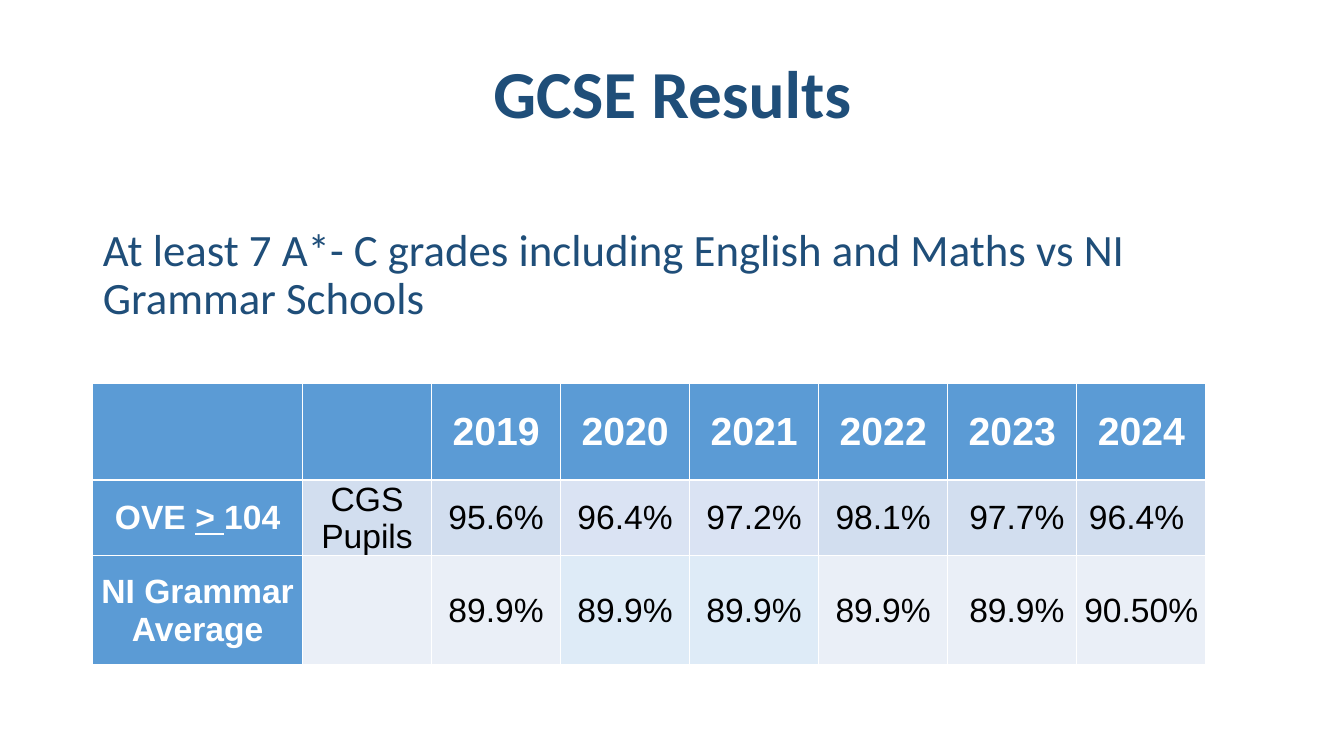
"""Build the GCSE results slide with its comparison table."""
from dataclasses import dataclass

from lxml.etree import SubElement
from pptx import Presentation
from pptx.dml.color import RGBColor
from pptx.enum.text import MSO_ANCHOR, PP_ALIGN
from pptx.oxml import parse_xml
from pptx.oxml.ns import nsdecls, qn
from pptx.util import Inches, Pt


@dataclass(frozen=True)
class Theme:
    navy: str = "1F4E79"
    blue: str = "5B9BD5"
    white: str = "FFFFFF"
    black: str = "000000"
    upper: str = "D2DEEF"
    upper_accent: str = "DAE3F3"
    lower: str = "EAEFF7"
    lower_accent: str = "DEEBF7"
    heading_font: str = "Calibri"
    table_font: str = "Arial"
    title_size: int = 48
    body_size: int = 32
    header_size: int = 28
    cell_size: int = 24


def style(para, name, size, color, bold, align):
    para.font.name = name
    para.font.size = Pt(size)
    para.font.color.rgb = RGBColor.from_string(color)
    para.font.bold = bold
    para.alignment = align


def add_border(cell, position, side, points):
    line = parse_xml(
        f'<a:ln{side} {nsdecls("a")} w="{Pt(points)}"><a:solidFill>'
        f'<a:srgbClr val="{theme.white}"/></a:solidFill></a:ln{side}>'
    )
    cell._tc.get_or_add_tcPr().insert(position, line)


theme = Theme()
deck = Presentation()
deck.slide_width, deck.slide_height = Inches(13.33), Inches(7.5)
page = deck.slides.add_slide(deck.slide_layouts[1])

title, body = page.shapes.title, page.placeholders[1]
headings = [
    (title, 0.4, 1.12, "GCSE Results", theme.title_size, True, PP_ALIGN.CENTER),
    (body, 2.21, 5.55, "At least 7 A*- C grades including English and Maths vs NI Grammar Schools",
     theme.body_size, False, PP_ALIGN.LEFT),
]
for box, top, height, text, size, bold, align in headings:
    box.left, box.top = Inches(0.92), Inches(top)
    box.width, box.height = Inches(11.5), Inches(height)
    box.text_frame.text = text
    para = box.text_frame.paragraphs[0]
    para.line_spacing = 0.9
    style(para, theme.heading_font, size, theme.navy, bold, align)

body_para = body.text_frame.paragraphs[0]
body_para.space_before = Pt(10)
bullet = body_para._p.get_or_add_pPr()
bullet.set("marL", "0")
bullet.set("indent", "0")
SubElement(bullet, qn("a:buNone"))

results = [
    ["", "", "2019", "2020", "2021", "2022", "2023", "2024"],
    ["OVE > 104", "CGS Pupils", "95.6%", "96.4%", "97.2%", "98.1%", " 97.7%", "96.4% "],
    ["NI Grammar Average", "", "89.9%", "89.9%", "89.9%", "89.9%", " 89.9%", "90.50%"],
]
row_heights = [0.96, 0.55, 1.08]
row_fills = [
    (theme.blue, theme.blue),
    (theme.upper, theme.upper_accent),
    (theme.lower, theme.lower_accent),
]
accent_years = ("2020", "2021")

frame = page.shapes.add_table(3, 8, Inches(0.92), Inches(3.8), Inches(11.03), Inches(2.59))
table = frame.table
table.horz_banding = False
for index, column in enumerate(table.columns):
    column.width = Inches(1.28 if index else 2.08)

for row_index, texts in enumerate(results):
    table.rows[row_index].height = Inches(row_heights[row_index])
    plain, accent = row_fills[row_index]
    for column_index, text in enumerate(texts):
        cell = table.cell(row_index, column_index)
        is_heading = row_index == 0 or column_index == 0
        is_accent = results[0][column_index] in accent_years
        fill = theme.blue if is_heading else accent if is_accent else plain
        cell.fill.solid()
        cell.fill.fore_color.rgb = RGBColor.from_string(fill)
        cell.vertical_anchor = MSO_ANCHOR.MIDDLE
        cell.margin_left = cell.margin_top = cell.margin_right = Inches(0.01)
        cell.margin_bottom = 0
        widths = {"L": 1, "R": 1, "T": 1.5 if row_index == 1 else 1, "B": 1.5 if row_index == 0 else 1}
        for position, (side, points) in enumerate(widths.items()):
            add_border(cell, position, side, points)
        para = cell.text_frame.paragraphs[0]
        before, sign, after = text.partition("> ")
        for part in filter(None, (before, sign, after)):
            span = para.add_run()
            span.text = part
            if part == sign:
                span.font.underline = True
        size = theme.cell_size if row_index else theme.header_size
        color = theme.white if is_heading else theme.black
        style(para, theme.table_font, size, color, is_heading, PP_ALIGN.CENTER)

deck.save("out.pptx")
